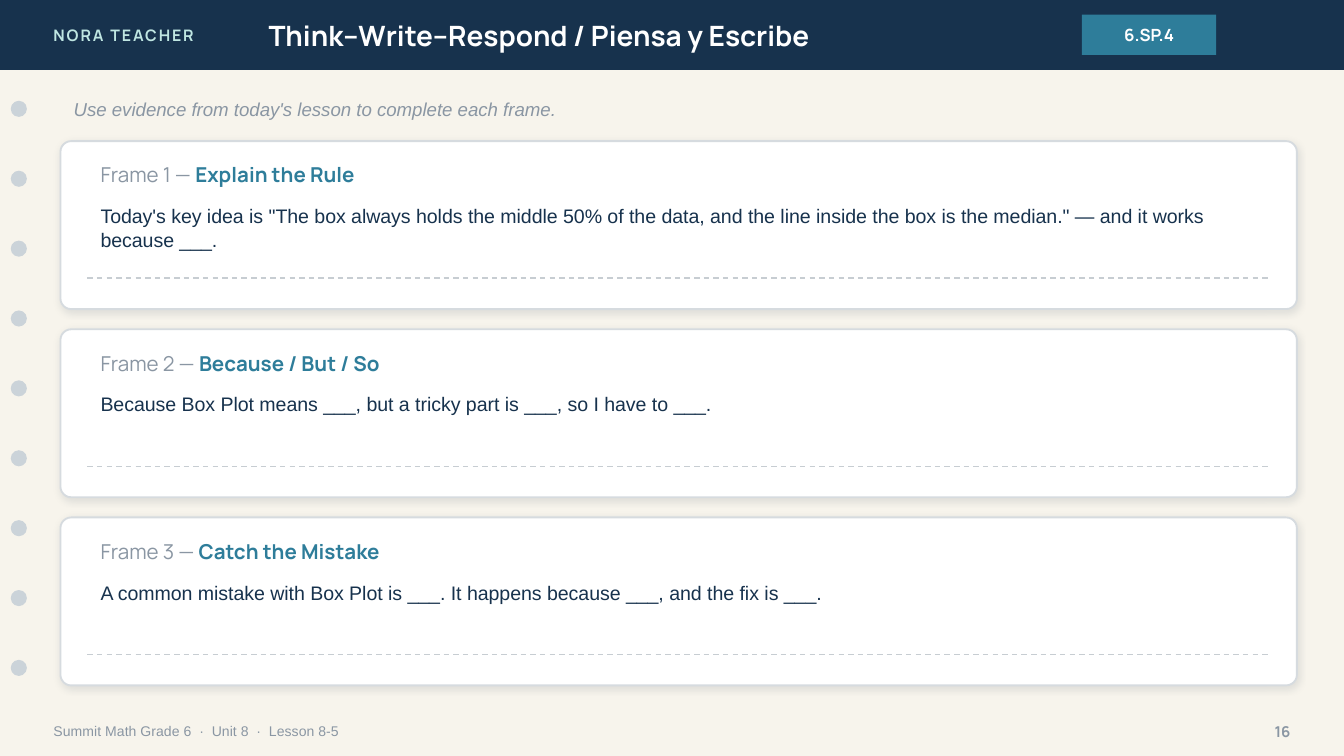
from lxml import etree
from pptx import Presentation
from pptx.dml.color import RGBColor
from pptx.enum.dml import MSO_LINE
from pptx.enum.shapes import MSO_CONNECTOR, MSO_SHAPE
from pptx.enum.text import MSO_ANCHOR, PP_ALIGN
from pptx.oxml import parse_xml
from pptx.oxml.ns import nsdecls, qn
from pptx.util import Inches, Pt

RECTANGLE, ROUNDED, OVAL = MSO_SHAPE.RECTANGLE, MSO_SHAPE.ROUNDED_RECTANGLE, MSO_SHAPE.OVAL
STRAIGHT, DASH = MSO_CONNECTOR.STRAIGHT, MSO_LINE.DASH
TOP, MIDDLE = MSO_ANCHOR.TOP, MSO_ANCHOR.MIDDLE
LEFT, CENTER, RIGHT = PP_ALIGN.LEFT, PP_ALIGN.CENTER, PP_ALIGN.RIGHT

COLORS = {
    "paper": "F7F4EC", "navy": "17324D", "mint": "BFE6E2", "white": "FFFFFF",
    "teal": "2E7D9A", "hole": "CBD3D9", "muted": "8A96A3", "border": "D6DBDF",
    "rule": "C7CDD2", "shadow": "1C2E42",
}
COLUMNS, ROWS = 100, 56.25
HEADING, BODY = "Manrope", "Arial"
HEADER_ROWS = 5.2
HOLE_COUNT, HOLE_TOP, HOLE_PITCH, HOLE_SIZE = 9, 7.5, 5.2, 1.2
CARD_LEFT, CARD_TOP, CARD_WIDTH, CARD_HEIGHT, CARD_PITCH = 4.5, 10.5, 92, 12.5, 14
CARD_PADDING = 2
FRAMES = [
    ("Explain the Rule",
     "Today's key idea is \"The box always holds the middle 50% of the data, "
     "and the line inside the box is the median.\" — and it works because ___."),
    ("Because / But / So",
     "Because Box Plot means ___, but a tricky part is ___, so I have to ___."),
    ("Catch the Mistake",
     "A common mistake with Box Plot is ___. It happens because ___, and the fix is ___."),
]


def grid(*cells):
    """Turn counts of grid cells into lengths."""
    return [Inches(cell / 10) for cell in cells]


def color(name):
    """Look up a colour by name."""
    return RGBColor.from_string(COLORS[name])


def style(span, size, font, tone, bold=False, italic=False):
    """Format one run of text."""
    span.font.size = Pt(size)
    span.font.name = font
    span.font.color.rgb = color(tone)
    span.font.bold = bold
    span.font.italic = italic


def add_block(page, kind, area, fill):
    """Add a filled shape without outline or shadow."""
    block = page.shapes.add_shape(kind, *grid(*area))
    block.shadow.inherit = False
    block.fill.solid()
    block.fill.fore_color.rgb = color(fill)
    block.line.fill.background()
    return block


def add_text(page, area, text, look, align=LEFT, anchor=MIDDLE):
    """Add a wrapped text box and return its first run."""
    box = page.shapes.add_textbox(*grid(*area))
    frame = box.text_frame
    frame.word_wrap = True
    frame.vertical_anchor = anchor
    frame.text = text
    para = frame.paragraphs[0]
    para.alignment = align
    style(para.runs[0], *look)
    return para


def add_rule(page, left, right, row):
    """Add a dashed writing line."""
    rule = page.shapes.add_connector(STRAIGHT, *grid(left, row, right, row))
    rule.line.color.rgb = color("rule")
    rule.line.width = Pt(0.75)
    rule.line.dash_style = DASH
    etree.SubElement(rule._element.spPr, qn("a:effectLst"))


def add_soft_shadow(block):
    """Give a shape a faint shadow straight below it."""
    effects = block._element.spPr.find(qn("a:effectLst"))
    effects.append(parse_xml(
        f'<a:outerShdw {nsdecls("a")} blurRad="{Pt(4)}" dist="{Pt(1)}" dir="5400000" '
        f'algn="bl" rotWithShape="0"><a:srgbClr val="{COLORS["shadow"]}">'
        '<a:alpha val="10000"/></a:srgbClr></a:outerShdw>'))


def add_header(page):
    """Add the title bar with series name, title and standard badge."""
    add_block(page, RECTANGLE, (0, 0, COLUMNS, HEADER_ROWS), "navy")
    series = add_text(page, (3, 0, 24, HEADER_ROWS), "NORA TEACHER",
                      (8.5, HEADING, "mint", True))
    series.runs[0].font._element.set("spc", "100")
    add_text(page, (19, 0, 56, HEADER_ROWS), "Think–Write–Respond / Piensa y Escribe",
             (15, HEADING, "white", True))
    badge = add_block(page, RECTANGLE, (80.5, 1.1, 10, 3), "teal")
    badge.text_frame.text = "6.SP.4"
    badge.text_frame.vertical_anchor = MIDDLE
    para = badge.text_frame.paragraphs[0]
    para.alignment = CENTER
    style(para.runs[0], 9, HEADING, "white", True)


def add_holes(page):
    """Add the column of binder holes."""
    for index in range(HOLE_COUNT):
        top = HOLE_TOP + index * HOLE_PITCH
        add_block(page, OVAL, (0.8, top, HOLE_SIZE, HOLE_SIZE), "hole")


def add_footer(page):
    """Add the lesson reference and page number."""
    add_text(page, (3, 53, 70, 2.8), "Summit Math Grade 6  ·  Unit 8  ·  Lesson 8-5",
             (7.5, BODY, "muted"))
    add_text(page, (92, 53, 5, 2.8), "16", (8, HEADING, "muted", True), RIGHT)


def add_card(page, index, name, prompt):
    """Add one sentence frame card."""
    top = CARD_TOP + index * CARD_PITCH
    card = add_block(page, ROUNDED, (CARD_LEFT, top, CARD_WIDTH, CARD_HEIGHT), "white")
    card.adjustments[0] = 0.064
    card.line.color.rgb = color("border")
    card.line.width = Pt(1)
    add_soft_shadow(card)
    left, width = CARD_LEFT + CARD_PADDING, CARD_WIDTH - 2 * CARD_PADDING
    title = add_text(page, (left, top + 1, width, 3), f"Frame {index + 1} — ",
                     (11, HEADING, "muted"))
    span = title.add_run()
    span.text = name
    style(span, 11, HEADING, "teal", True)
    add_text(page, (left, top + 4.2, width, 4), prompt, (10.5, BODY, "navy"), anchor=TOP)
    add_rule(page, left, left + width, top + 10.2)


def main():
    """Build the deck and save it."""
    deck = Presentation()
    deck.slide_width, deck.slide_height = grid(COLUMNS, ROWS)
    page = deck.slides.add_slide(deck.slide_layouts[6])
    page.background.fill.solid()
    page.background.fill.fore_color.rgb = color("paper")
    add_header(page)
    add_holes(page)
    add_footer(page)
    add_text(page, (CARD_LEFT, 6.6, CARD_WIDTH, 3),
             "Use evidence from today's lesson to complete each frame.",
             (10, BODY, "muted", False, True))
    for index, (name, prompt) in enumerate(FRAMES):
        add_card(page, index, name, prompt)
    deck.save("out.pptx")


if __name__ == "__main__":
    main()
